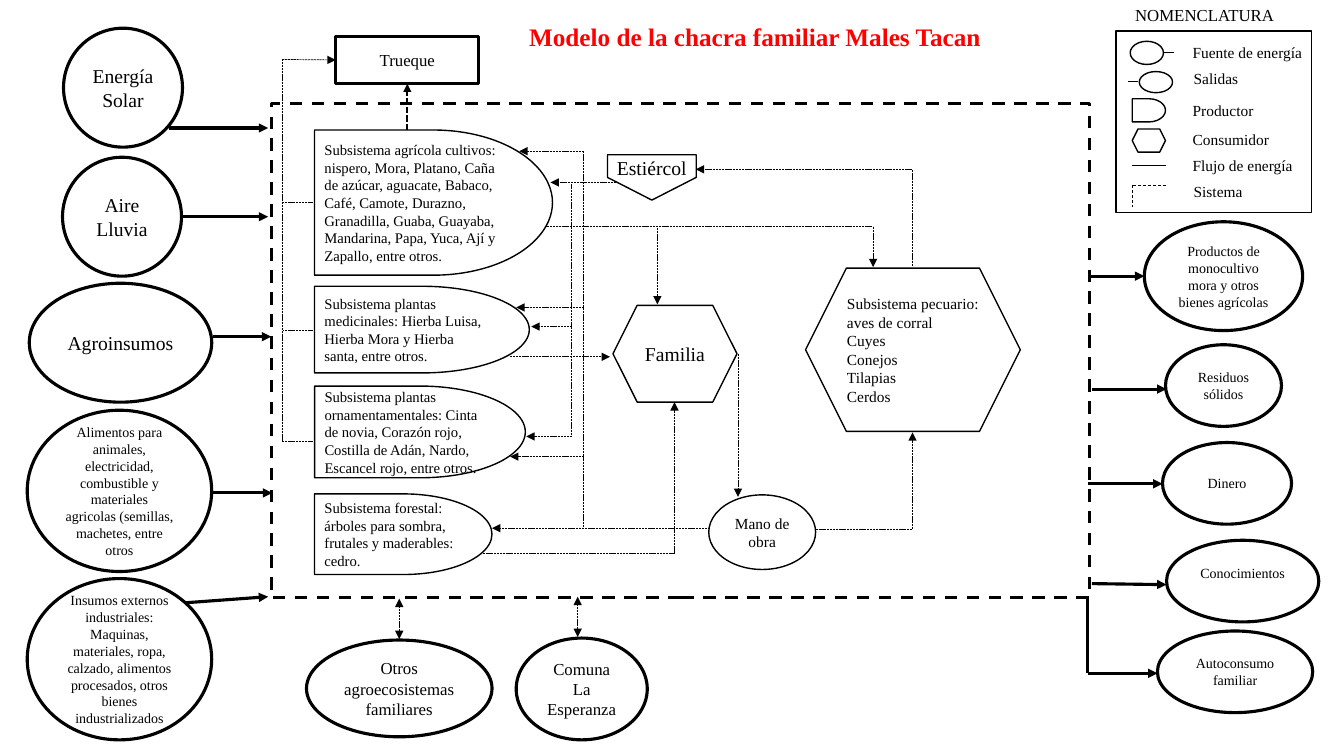
from dataclasses import dataclass

from lxml import etree
from pptx import Presentation
from pptx.dml.color import RGBColor
from pptx.enum.dml import MSO_LINE
from pptx.enum.shapes import MSO_CONNECTOR, MSO_SHAPE
from pptx.enum.text import MSO_ANCHOR, MSO_AUTO_SIZE, PP_ALIGN
from pptx.oxml.ns import qn
from pptx.util import Emu, Pt

PX = 9144  # 100 px to the inch
STRAIGHT = MSO_CONNECTOR.STRAIGHT
DASH, FINE_DASH = MSO_LINE.DASH, MSO_LINE.SQUARE_DOT
RECT, ELLIPSE = MSO_SHAPE.RECTANGLE, MSO_SHAPE.OVAL
PRODUCER, CONSUMER = MSO_SHAPE.FLOWCHART_DELAY, MSO_SHAPE.HEXAGON
PENTAGON = MSO_SHAPE.PENTAGON
LEFT, CENTER = PP_ALIGN.LEFT, PP_ALIGN.CENTER
MIDDLE, TOP = MSO_ANCHOR.MIDDLE, MSO_ANCHOR.TOP
FIT_SHAPE = MSO_AUTO_SIZE.SHAPE_TO_FIT_TEXT
TOP_SIDE, LEFT_SIDE, BOTTOM_SIDE = 0, 1, 2


@dataclass(frozen=True)
class Theme:
    font: str = "Times New Roman"
    ink: RGBColor = RGBColor(0, 0, 0)
    paper: RGBColor = RGBColor(255, 255, 255)
    accent: RGBColor = RGBColor(255, 0, 0)
    title: float = 18
    large: float = 14
    medium: float = 12
    label: float = 11
    body: float = 10.5
    small: float = 10
    thick: float = 2.25
    medium_line: float = 1.5
    thin: float = 1
    hair: float = 0.5


THEME = Theme()

# Producers: text, top, width, height
SUBSYSTEMS = [
    ("Subsistema agrícola cultivos: nispero, Mora, Platano, Caña de azúcar, "
     "aguacate, Babaco, Café, Camote, Durazno, Granadilla, Guaba, Guayaba, "
     "Mandarina, Papa, Yuca, Ají y Zapallo, entre otros.", 129, 236, 144),
    ("Subsistema plantas medicinales: Hierba Luisa, Hierba Mora y Hierba "
     "santa, entre otros.", 284, 213, 86),
    ("Subsistema plantas ornamentamentales: Cinta de novia, Corazón rojo, "
     "Costilla de Adán, Nardo, Escancel rojo, entre otros.", 383, 209, 91),
    ("Subsistema forestal: árboles para sombra, frutales y maderables: cedro.",
     490, 176, 80),
]
# Energy sources and neighbours: lines, box, type size
SOURCES = [
    (["Energía", "Solar"], (63, 28, 118, 118), THEME.large),
    (["Aire", "Lluvia"], (62, 156, 118, 118), THEME.large),
    (["Agroinsumos"], (29, 281, 181, 118), THEME.large),
    (["Alimentos para animales, electricidad, combustible y materiales "
      "agricolas (semillas, machetes, entre otros"],
     (27, 407, 183, 160), THEME.small),
    (["Insumos externos industriales:",
      "Maquinas, materiales, ropa, calzado, alimentos procesados, otros "
      "bienes industrializados"], (27, 574, 183, 160), THEME.small),
    (["Otros agroecosistemas familiares"], (304, 635, 184, 96), THEME.medium),
    (["Comuna La Esperanza"], (512, 633, 130, 101), THEME.medium),
]
# Outputs: text, box, extra space below the text
OUTPUTS = [
    ("Productos de monocultivo mora y otros bienes agrícolas",
     (1135, 220, 157, 108), 0),
    ("Residuos sólidos", (1156, 342, 115, 81), 0),
    ("Dinero", (1153, 439, 128, 81), 0),
    ("Conocimientos", (1157, 536, 151, 81), 17),
    ("Autoconsumo familiar", (1148, 626, 154, 81), 0),
]
# Flows inside the system: corner points, arrow at the end
FLOWS = [
    ([(905, 264), (905, 168), (690, 168)], True),
    ([(567, 183), (567, 433), (522, 433)], True),
    ([(567, 324), (527, 324)], True),
    ([(540, 225), (866, 225), (866, 265)], True),
    ([(652, 226), (652, 302)], True),
    ([(506, 354), (605, 354)], True),
    ([(476, 549), (669, 549), (669, 399)], True),
    ([(310, 328), (281, 328)], False),
    ([(310, 201), (281, 201)], False),
    ([(809, 525), (905, 525), (905, 429)], True),
    ([(732, 351), (732, 493)], True),
    ([(579, 523), (579, 150), (515, 150)], True),
    ([(579, 453), (506, 453)], True),
    ([(579, 305), (512, 305)], True),
    ([(611, 181), (546, 181)], True),
    ([(704, 524), (488, 524)], True),
]
BOUNDARY_FLOWS = [
    [(168, 127), (266, 127)], [(181, 215), (266, 215)],
    [(211, 334), (269, 334)], [(211, 489), (270, 489)],
    [(184, 598), (266, 592)],
    [(1081, 274), (1135, 274)], [(1083, 386), (1157, 386)],
    [(1079, 480), (1153, 480)], [(1083, 579), (1157, 580)],
    [(1079, 594), (1079, 668), (1148, 668)],
]
LEGEND_LABELS = [
    ("Fuente de energía", (1173, 35, 134, 34)),
    ("Salidas", (1174, 63, 120, 30)),
    ("Productor", (1173, 103, 101, 12)),
    ("Consumidor", (1173, 132, 101, 12)),
    ("Flujo de energía", (1173, 161, 136, 7)),
    ("Sistema", (1174, 184, 101, 12)),
]
LEGEND_SYMBOLS = [
    (ELLIPSE, (1121, 41, 33, 23)), (ELLIPSE, (1130, 71, 33, 21)),
    (PRODUCER, (1123, 98, 33, 23)), (CONSUMER, (1123, 128, 33, 23)),
]
LEGEND_LINES = [
    ([(1154, 52), (1164, 52)], None), ([(1119, 81), (1129, 81)], None),
    ([(1123, 164), (1156, 164)], None),
    ([(1156, 184), (1123, 184), (1123, 205)], DASH),
]


def px(*lengths):
    return [Emu(length * PX) for length in lengths]


def write(frame, lines, size, align=CENTER, anchor=MIDDLE, color=THEME.ink,
          bold=False):
    frame.vertical_anchor = anchor
    for index, line in enumerate(lines):
        paragraph = frame.paragraphs[0] if index == 0 else frame.add_paragraph()
        paragraph.alignment = align
        run = paragraph.add_run()
        run.text = line
        run.font.name, run.font.size = THEME.font, Pt(size)
        run.font.color.rgb, run.font.bold = color, bold


def node(slide, kind, box, width=THEME.thin, lines=(), size=THEME.body,
         align=CENTER, filled=True):
    shape = slide.shapes.add_shape(kind, *px(*box))
    shape.shadow.inherit = False
    if filled:
        shape.fill.solid()
        shape.fill.fore_color.rgb = THEME.paper
    else:
        shape.fill.background()
    if width:
        shape.line.color.rgb, shape.line.width = THEME.ink, Pt(width)
    else:
        shape.line.fill.background()
    shape.text_frame.word_wrap = True
    write(shape.text_frame, lines, size, align)
    return shape


def caption(slide, box, text, size, wrap=False, **style):
    frame = slide.shapes.add_textbox(*px(*box)).text_frame
    frame.word_wrap, frame.auto_size = wrap, FIT_SHAPE
    write(frame, [text], size, LEFT, TOP, **style)


def flow(slide, points, width=THEME.hair, dash=FINE_DASH, arrows=("tailEnd",)):
    """Draw straight segments through the points; arrows go on the last one."""
    for start, end in zip(points, points[1:]):
        segment = slide.shapes.add_connector(STRAIGHT, *px(*start, *end))
        segment.line.color.rgb, segment.line.width = THEME.ink, Pt(width)
        segment.line.dash_style = dash
        etree.SubElement(segment._element.spPr, qn("a:effectLst"))
    for arrow in arrows:
        outline = segment.line._get_or_add_ln()
        etree.SubElement(outline, qn(f"a:{arrow}"), type="triangle")
    return segment


def draw_system(slide):
    boundary = node(slide, RECT, (269, 103, 812, 490), THEME.thick)
    boundary.line.dash_style = DASH
    barter = node(slide, RECT, (333, 36, 142, 47), THEME.thick,
                  ["Trueque"], THEME.medium)
    flow(slide, [(404, 129), (404, 83)],
         THEME.medium_line).end_connect(barter, BOTTOM_SIDE)
    flow(slide, [(310, 438), (280, 438), (280, 59),
                 (333, 59)]).end_connect(barter, LEFT_SIDE)
    for points, has_arrow in FLOWS:
        flow(slide, points, arrows=("tailEnd",) if has_arrow else ())

    # Producers, consumers and labour
    for text, top, width, height in SUBSYSTEMS:
        node(slide, PRODUCER, (312, top, width, height), lines=[text], align=LEFT)
    node(slide, CONSUMER, (608, 303, 123, 96), lines=["Familia"],
         size=THEME.large)
    node(slide, CONSUMER, (799, 266, 213, 162), size=THEME.label, align=LEFT,
         lines=["Subsistema pecuario: aves de corral", "Cuyes", "Conejos",
                "Tilapias", "Cerdos"])
    node(slide, ELLIPSE, (703, 491, 106, 74), lines=["Mano de obra"],
         size=THEME.label)
    node(slide, PENTAGON, (624, 132, 45, 88)).rotation = 90
    caption(slide, (602, 150, 90, 34), "Estiércol", THEME.large)


def draw_surroundings(slide):
    for lines, box, size in SOURCES:
        node(slide, ELLIPSE, box, THEME.thick, lines, size)
    for text, box, space_below in OUTPUTS:
        output = node(slide, ELLIPSE, box, THEME.thick, [text], THEME.small)
        output.text_frame.margin_bottom = px(5 + space_below)[0]
    for points in BOUNDARY_FLOWS:
        flow(slide, points, THEME.thick, None)
    for points in ([(396, 634), (396, 594)], [(573, 632), (573, 592)]):
        flow(slide, points, arrows=("headEnd", "tailEnd"))


def draw_legend(slide):
    caption(slide, (1116, 0, 159, 30), "NOMENCLATURA", THEME.medium)
    for text, box in LEGEND_LABELS:
        node(slide, RECT, box, 0, [text], THEME.label, LEFT)
    for kind, box in LEGEND_SYMBOLS:
        node(slide, kind, box)
    for points, dash in LEGEND_LINES:
        flow(slide, points, dash=dash, arrows=())
    node(slide, RECT, (1107, 31, 194, 180), filled=False)


def main():
    deck = Presentation()
    deck.slide_width, deck.slide_height = px(1333, 750)
    slide = deck.slides.add_slide(deck.slide_layouts[6])
    draw_system(slide)
    draw_surroundings(slide)
    caption(slide, (515, 16, 534, 40), "Modelo de la chacra familiar Males Tacan",
            THEME.title, wrap=True, color=THEME.accent, bold=True)
    draw_legend(slide)
    deck.save("out.pptx")


if __name__ == "__main__":
    main()
